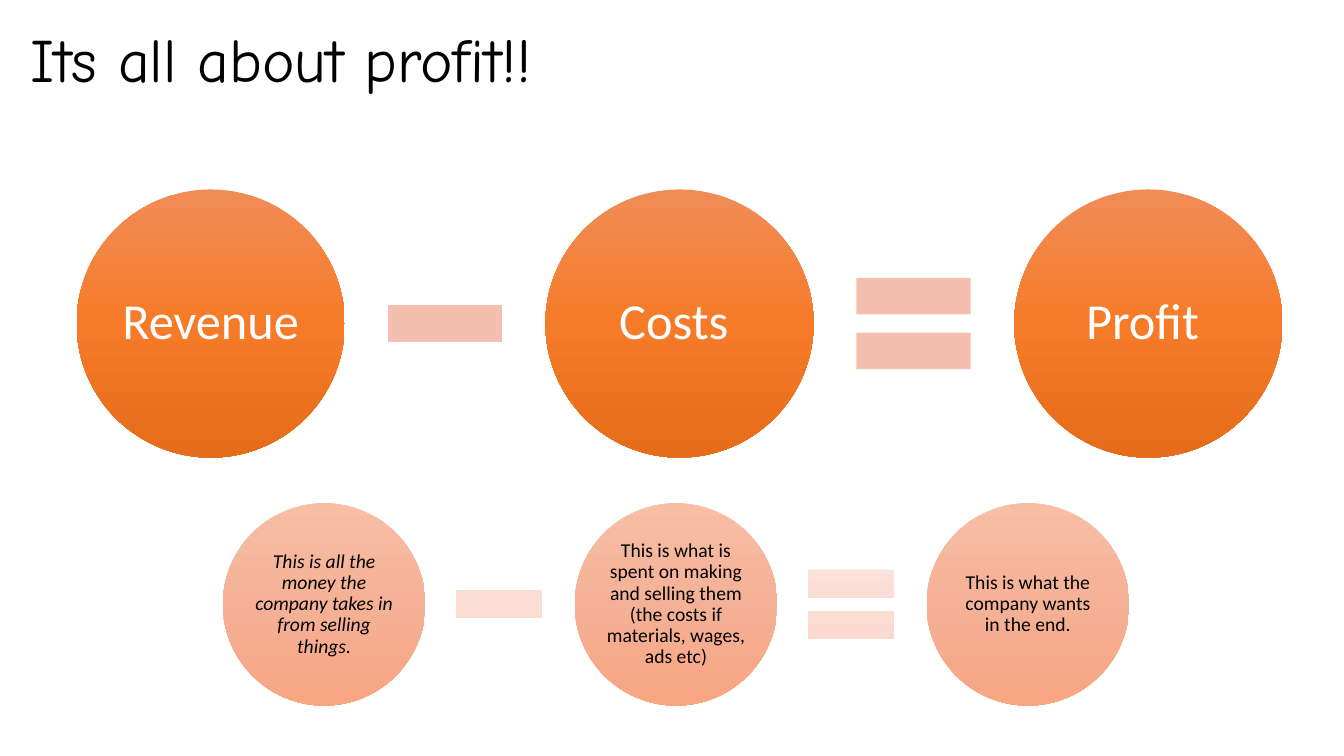
"""Build a slide showing that revenue minus costs equals profit."""
import copy
from dataclasses import dataclass

import pptx
import pptx.dml.color
import pptx.enum.shapes
import pptx.enum.text
import pptx.shapes.autoshape
import pptx.slide
import pptx.text.text
import pptx.util

Inches = pptx.util.Inches
MSO_SHAPE = pptx.enum.shapes.MSO_SHAPE

COLORS = {
    "text": "000000",
    "term_text": "FFFFFF",
    "term_top": "F18C57",
    "term_middle": "F67B28",
    "term_bottom": "E56C19",
    "term_sign": "F4BFAE",
    "note_top": "F7BDA5",
    "note_middle": "F5B196",
    "note_bottom": "F8A582",
    "note_sign_top": "FCE8E2",
    "note_sign_middle": "FADCD3",
    "note_sign_bottom": "FAD7CC",
}
SIGNS = (MSO_SHAPE.MATH_MINUS, MSO_SHAPE.MATH_EQUAL)


@dataclass(frozen=True)
class EquationRow:
    """Describe three circles joined by a minus and an equals sign."""

    texts: tuple[str, ...]
    left: float
    top: float
    pitch: float
    diameter: float
    sign_offset: float
    sign_size: float
    inset: float
    font_size: int
    text_color: str
    circle_colors: tuple[str, ...]
    sign_colors: tuple[str, ...]
    italic_index: int | None = None


ROWS = (
    EquationRow(
        texts=("Revenue", "Costs ", "Profit "),
        left=0.76, top=1.88, pitch=4.65, diameter=2.66,
        sign_offset=2.88, sign_size=1.54, inset=0.05,
        font_size=36, text_color="term_text",
        circle_colors=("term_top", "term_middle", "term_bottom"),
        sign_colors=("term_sign",),
    ),
    EquationRow(
        texts=(
            "This is all the money the company takes in from selling things.",
            "This is what is spent on making and selling them "
            "(the costs if materials, wages, ads etc)",
            "This is what the company wants in the end.",
        ),
        left=2.21, top=4.99, pitch=3.49, diameter=2.01,
        sign_offset=2.16, sign_size=1.16, inset=0.02,
        font_size=14, text_color="text",
        circle_colors=("note_top", "note_middle", "note_bottom"),
        sign_colors=("note_sign_top", "note_sign_middle", "note_sign_bottom"),
        italic_index=0,
    ),
)


def color(name: str) -> pptx.dml.color.RGBColor:
    """Return the named colour."""
    return pptx.dml.color.RGBColor.from_string(COLORS[name])


def fill_shape(shape: pptx.shapes.autoshape.Shape, names: tuple[str, ...]) -> None:
    """Fill with one solid colour or an even gradient from top to bottom."""
    if len(names) == 1:
        shape.fill.solid()
        shape.fill.fore_color.rgb = color(names[0])
        return
    shape.fill.gradient()
    shape.fill.gradient_angle = 270
    stop_list = shape.fill._fill._gradFill.gsLst
    for _ in range(len(names) - len(stop_list)):
        stop_list.append(copy.deepcopy(stop_list[0]))
    for index, (stop, name) in enumerate(zip(shape.fill.gradient_stops, names)):
        stop.position = index / (len(names) - 1)
        stop.color.rgb = color(name)


def add_filled_shape(
    slide: pptx.slide.Slide, kind: MSO_SHAPE, left: float, top: float,
    size: float, names: tuple[str, ...],
) -> pptx.shapes.autoshape.Shape:
    """Add a square-bounded shape without outline or shadow."""
    shape = slide.shapes.add_shape(
        kind, Inches(left), Inches(top), Inches(size), Inches(size)
    )
    shape.shadow.inherit = False
    shape.line.fill.background()
    fill_shape(shape, names)
    return shape


def write_text(
    frame: pptx.text.text.TextFrame, text: str, font_name: str,
    font_size: int, color_name: str,
) -> pptx.text.text._Paragraph:
    """Write one vertically centred paragraph and return it."""
    frame.word_wrap = True
    frame.vertical_anchor = pptx.enum.text.MSO_ANCHOR.MIDDLE
    paragraph = frame.paragraphs[0]
    paragraph.text = text
    paragraph.line_spacing = 0.9
    paragraph.font.name = font_name
    paragraph.font.size = pptx.util.Pt(font_size)
    paragraph.font.color.rgb = color(color_name)
    return paragraph


def add_row(slide: pptx.slide.Slide, row: EquationRow) -> None:
    """Draw the circles of a row and the signs between them."""
    for index, text in enumerate(row.texts):
        left = row.left + index * row.pitch
        circle = add_filled_shape(
            slide, MSO_SHAPE.OVAL, left, row.top, row.diameter, row.circle_colors
        )
        frame = circle.text_frame
        frame.margin_left = frame.margin_right = Inches(row.inset)
        frame.margin_top = frame.margin_bottom = Inches(row.inset)
        paragraph = write_text(frame, text, "Calibri", row.font_size, row.text_color)
        paragraph.alignment = pptx.enum.text.PP_ALIGN.CENTER
        paragraph.font.italic = index == row.italic_index
        if index < len(SIGNS):
            sign_top = row.top + (row.diameter - row.sign_size) / 2
            add_filled_shape(
                slide, SIGNS[index], left + row.sign_offset, sign_top,
                row.sign_size, row.sign_colors,
            )


def main() -> None:
    """Build and save the presentation."""
    presentation = pptx.Presentation()
    presentation.slide_width = Inches(13.33)
    presentation.slide_height = Inches(7.5)
    slide = presentation.slides.add_slide(presentation.slide_layouts[6])
    title = slide.shapes.add_textbox(
        Inches(0.2), Inches(-0.1), Inches(11.5), Inches(1.45)
    )
    write_text(title.text_frame, "Its all about profit!!", "Comic Neue", 44, "text")
    for row in ROWS:
        add_row(slide, row)
    presentation.save("out.pptx")


if __name__ == "__main__":
    main()
